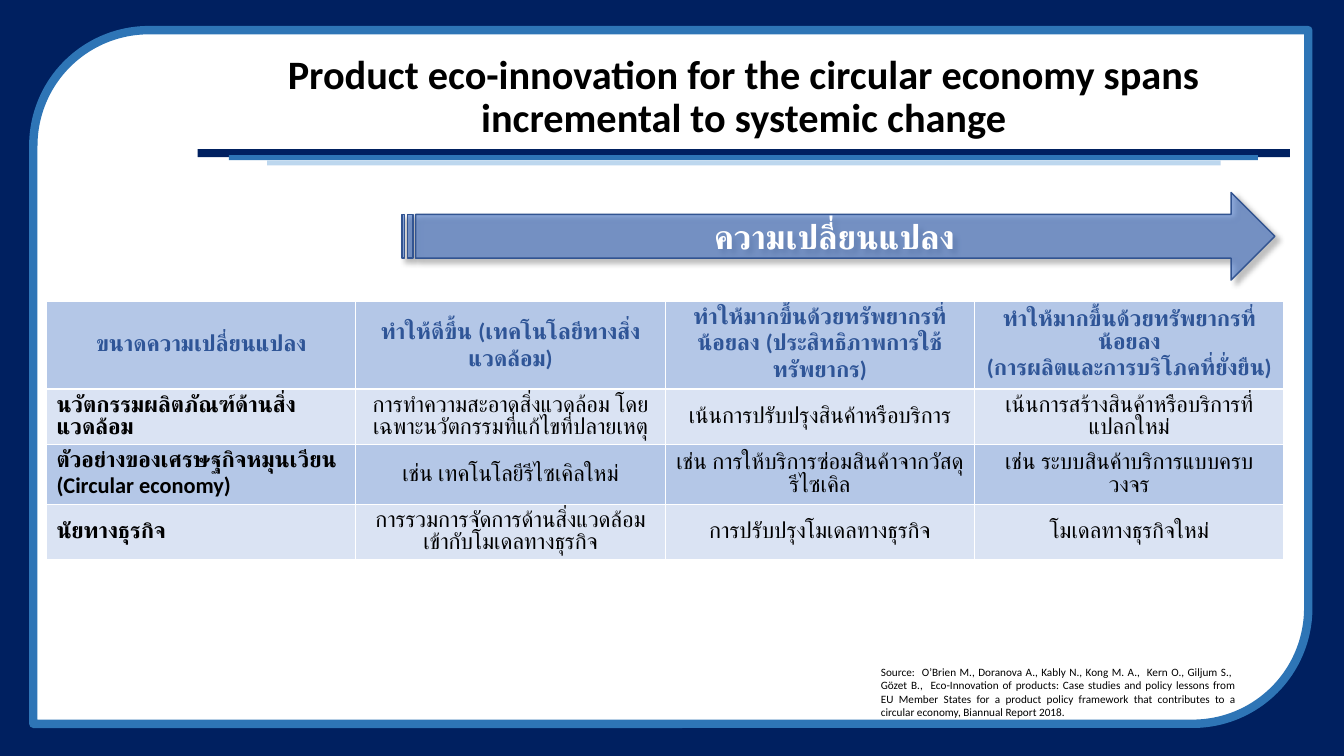
"""Build the eco-innovation slide with its change arrow and comparison table."""
from lxml import etree
from pptx import Presentation
from pptx.dml.color import RGBColor
from pptx.enum.shapes import MSO_SHAPE
from pptx.enum.text import MSO_ANCHOR, PP_ALIGN
from pptx.oxml import parse_xml
from pptx.oxml.ns import nsdecls, qn
from pptx.util import Cm, Pt

RECT = MSO_SHAPE.RECTANGLE
FRAME = MSO_SHAPE.ROUND_2_DIAG_RECTANGLE
ARROW = MSO_SHAPE.STRIPED_RIGHT_ARROW
MIDDLE, TOP = MSO_ANCHOR.MIDDLE, MSO_ANCHOR.TOP
LEFT, CENTER, JUSTIFY = PP_ALIGN.LEFT, PP_ALIGN.CENTER, PP_ALIGN.JUSTIFY
TITLE_ONLY = 5

NAVY, BLUE, PALE = "002060", "2E75B6", "BDD7EE"
WHITE, BLACK, HEADING = "FFFFFF", "000000", "2F5597"
BANDS = ["B4C7E7", "DAE3F3"]

BARS = [
    (4.98, 3.76, 27.53, 0.2, NAVY),
    (5.77, 3.91, 25.93, 0.13, BLUE),
    (6.73, 4.04, 24.03, 0.13, PALE),
]
ROW_HEIGHTS = [2.21, 1.4, 1.47, 1.4]
ROWS = [
    ["ขนาดความเปลี่ยนแปลง",
     "ทำให้ดีขึ้น (เทคโนโลยีทางสิ่งแวดล้อม)",
     "ทำให้มากขึ้นด้วยทรัพยากรที่น้อยลง (ประสิทธิภาพการใช้ทรัพยากร)",
     "ทำให้มากขึ้นด้วยทรัพยากรที่น้อยลง\n(การผลิตและการบริโภคที่ยั่งยืน)"],
    ["นวัตกรรมผลิตภัณฑ์ด้านสิ่งแวดล้อม",
     "การทำความสะอาดสิ่งแวดล้อม โดยเฉพาะนวัตกรรมที่แก้ไขที่ปลายเหตุ",
     "เน้นการปรับปรุงสินค้าหรือบริการ",
     "เน้นการสร้างสินค้าหรือบริการที่แปลกใหม่"],
    ["ตัวอย่างของเศรษฐกิจหมุนเวียน (Circular economy)",
     "เช่น เทคโนโลยีรีไซเคิลใหม่",
     "เช่น การให้บริการซ่อมสินค้าจากวัสดุรีไซเคิล",
     "เช่น ระบบสินค้าบริการแบบครบวงจร"],
    ["นัยทางธุรกิจ",
     "การรวมการจัดการด้านสิ่งแวดล้อมเข้ากับโมเดลทางธุรกิจ",
     "การปรับปรุงโมเดลทางธุรกิจ",
     "โมเดลทางธุรกิจใหม่"],
]
TITLE = ("Product eco-innovation for the circular economy spans "
         "incremental to systemic change")
SOURCE = ("Source:  O’Brien M., Doranova A., Kably N., Kong M. A.,  Kern O., "
          "Giljum S.,  Gözet B.,  Eco-Innovation of products: Case studies and "
          "policy lessons from EU Member States for a product policy framework "
          "that contributes to a circular economy, Biannual Report 2018.")


def rgb(value):
    """Turn a hex string into a colour."""
    return RGBColor.from_string(value)


class Deck:
    """Hold the style and the current slide, and draw its elements."""

    font = "Calibri"

    def __init__(self, width, height):
        """Start a presentation with one title-only slide."""
        self.prs = Presentation()
        self.prs.slide_width, self.prs.slide_height = Cm(width), Cm(height)
        self.s = self.prs.slides.add_slide(self.prs.slide_layouts[TITLE_ONLY])

    def fill_text(self, tf, text, size, color=BLACK, bold=False, align=CENTER,
                  anchor=MIDDLE, spacing=1.0):
        """Fill a text frame with formatted paragraphs."""
        tf.text = text
        tf.word_wrap = True
        tf.vertical_anchor = anchor
        fmt = {"name": self.font, "size": Pt(size), "bold": bold}
        for p in tf.paragraphs:
            p.alignment, p.line_spacing = align, spacing
            for r in p.runs:
                for key, value in fmt.items():
                    setattr(r.font, key, value)
                r.font.color.rgb = rgb(color)

    def shape(self, kind, x, y, w, h, fill, line=None, weight=1):
        """Add a preset shape without shadow."""
        sp = self.s.shapes.add_shape(kind, Cm(x), Cm(y), Cm(w), Cm(h))
        sp.shadow.inherit = False
        sp.fill.solid()
        sp.fill.fore_color.rgb = rgb(fill)
        if line:
            sp.line.color.rgb = rgb(line)
            sp.line.width = Pt(weight)
        else:
            sp.line.fill.background()
        return sp

    def title(self, text, x, y, w, h):
        """Place the title placeholder above the shapes drawn so far."""
        sp = self.s.shapes.title
        box = {"left": x, "top": y, "width": w, "height": h}
        for key, value in box.items():
            setattr(sp, key, Cm(value))
        self.fill_text(sp.text_frame, text, 28.8, bold=True, spacing=0.9)
        self.s.shapes._spTree.append(sp._element)

    def table(self, rows, heights, x, y, w):
        """Add a banded table with bold headings in row and column one."""
        frame = self.s.shapes.add_table(len(rows), len(rows[0]), Cm(x), Cm(y),
                                        Cm(w), Cm(sum(heights)))
        table = frame.table
        for i, (texts, height) in enumerate(zip(rows, heights)):
            table.rows[i].height = Cm(height)
            for j, text in enumerate(texts):
                cell = table.cell(i, j)
                cell.fill.solid()
                cell.fill.fore_color.rgb = rgb(BANDS[i % 2])
                self.fill_text(cell.text_frame, text, 16,
                               color=BLACK if i else HEADING,
                               bold=i == 0 or j == 0,
                               align=LEFT if i and j == 0 else CENTER)
                cell.vertical_anchor = MIDDLE

    def text(self, text, x, y, w, h, size):
        """Add a justified text box."""
        sp = self.s.shapes.add_textbox(Cm(x), Cm(y), Cm(w), Cm(h))
        self.fill_text(sp.text_frame, text, size, align=JUSTIFY, anchor=TOP)

    def arrow(self, text, x, y, w, h):
        """Add a translucent striped arrow with a soft shadow."""
        sp = self.shape(ARROW, x, y, w, h, "4472C4", "325491")
        self.fill_text(sp.text_frame, text, 24, WHITE, bold=True)
        spPr = sp._element.spPr
        clr = spPr.find(qn("a:solidFill")).find(qn("a:srgbClr"))
        etree.SubElement(clr, qn("a:alpha"), val="61000")
        spPr.find(qn("a:effectLst")).append(parse_xml(
            f'<a:outerShdw {nsdecls("a")} blurRad="{Pt(4)}" dist="{Pt(3)}" '
            'dir="2700000" algn="tl" rotWithShape="0">'
            f'<a:srgbClr val="{BLACK}"><a:alpha val="40000"/></a:srgbClr>'
            '</a:outerShdw>'))


def main():
    """Draw the slide and save it."""
    deck = Deck(33.87, 19.05)
    deck.shape(RECT, 0, 0, 33.87, 19.05, NAVY)
    deck.shape(FRAME, 0.84, 0.76, 32.13, 17.48, WHITE, BLUE, 6)
    for x, y, w, h, fill in BARS:
        deck.shape(RECT, x, y, w, h, fill)
    deck.title(TITLE, 4.98, 1.24, 27.53, 2.46)
    deck.table(ROWS, ROW_HEIGHTS, 1.17, 7.59, 31.19)
    deck.text(SOURCE, 21.95, 16.64, 9.45, 1.63, 8)
    deck.arrow("ความเปลี่ยนแปลง", 10.13, 4.85, 22, 2.21)
    deck.prs.save("out.pptx")


if __name__ == "__main__":
    main()
